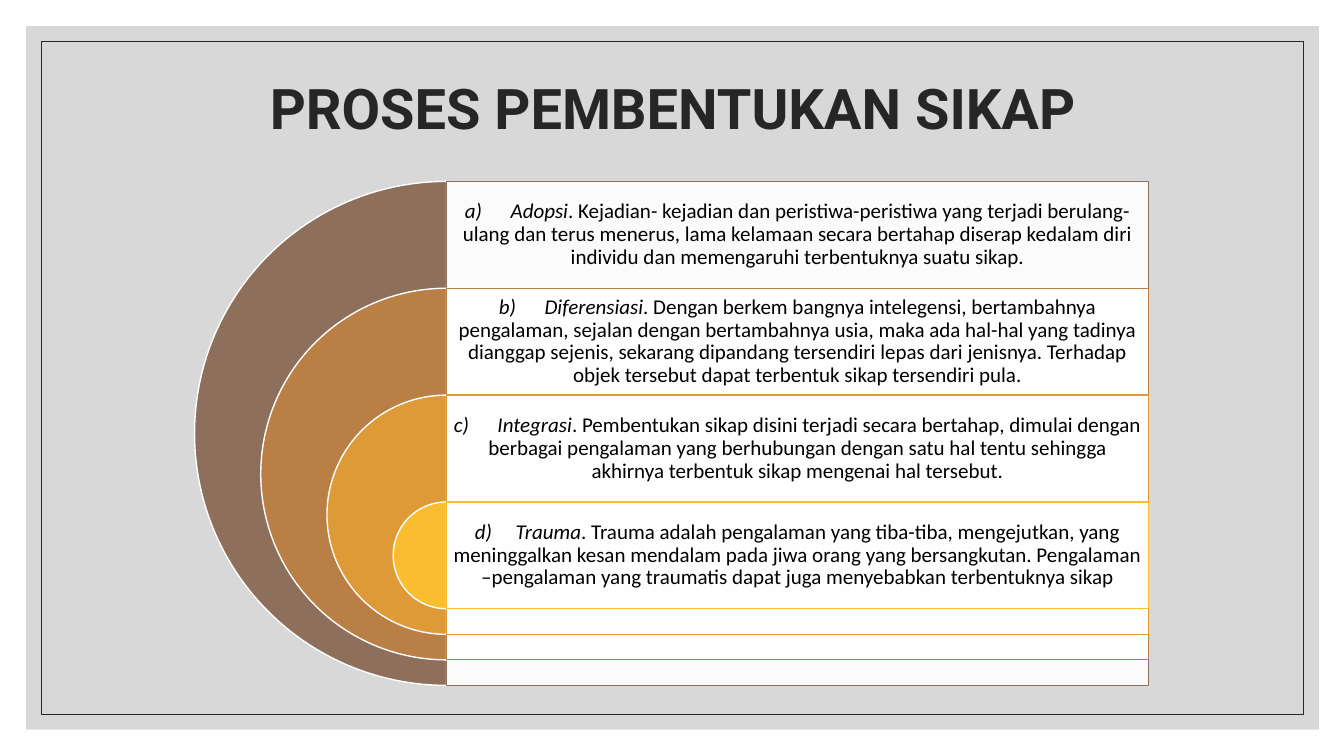
import pptx
import pptx.dml.color
import pptx.enum.shapes
import pptx.enum.text
import pptx.util
from lxml import etree
from pptx.oxml.ns import qn
from pptx.util import Inches

TITLE = "PROSES PEMBENTUKAN SIKAP"
# Marker, gap after the marker in points, term, explanation, colour
STAGES = [
    ("a)", 17, "Adopsi",
     ". Kejadian- kejadian dan peristiwa-peristiwa yang terjadi berulang-ulang dan terus "
     "menerus, lama kelamaan secara bertahap diserap kedalam diri individu dan memengaruhi "
     "terbentuknya suatu sikap.", "8D6F5B"),
    ("b)", 17, "Diferensiasi",
     ". Dengan berkem bangnya intelegensi, bertambahnya pengalaman, sejalan dengan "
     "bertambahnya usia, maka ada hal-hal yang tadinya dianggap sejenis, sekarang dipandang "
     "tersendiri lepas dari jenisnya. Terhadap objek tersebut dapat terbentuk sikap "
     "tersendiri pula.", "B97F44"),
    ("c)", 17, "Integrasi",
     ". Pembentukan sikap disini terjadi secara bertahap, dimulai dengan berbagai pengalaman "
     "yang berhubungan dengan satu hal tentu sehingga akhirnya terbentuk sikap mengenai hal "
     "tersebut.", "DD9A37"),
    ("d)", 13.5, "Trauma",
     ". Trauma adalah pengalaman yang tiba-tiba, mengejutkan, yang meninggalkan kesan "
     "mendalam pada jiwa orang yang bersangkutan. Pengalaman –pengalaman yang traumatis "
     "dapat juga menyebabkan terbentuknya sikap", "FABD2F"),
]
CENTER_X, TOP = 4.43, 1.8
PANEL_WIDTH, ROW_HEIGHT, OUTER_SIZE = 6.96, 1.06, 5
SIZE_STEP = (OUTER_SIZE - ROW_HEIGHT) / (len(STAGES) - 1)

SHAPES = pptx.enum.shapes.MSO_SHAPE


def color(hex_string):
    return pptx.dml.color.RGBColor.from_string(hex_string)


def add_shape(kind, left, top, width, height, fill=None, opacity=100, line=None, line_width=1):
    shape = slide.shapes.add_shape(
        kind, Inches(left), Inches(top), Inches(width), Inches(height))
    shape.shadow.inherit = False
    if fill:
        shape.fill.solid()
        shape.fill.fore_color.rgb = color(fill)
        if opacity < 100:
            fill_color = shape.fill._xPr.find(qn("a:solidFill"))[0]
            etree.SubElement(fill_color, qn("a:alpha"), val=str(opacity * 1000))
    else:
        shape.fill.background()
    if line:
        shape.line.color.rgb = color(line)
        shape.line.width = pptx.util.Pt(line_width)
    else:
        shape.line.fill.background()
    return shape


def add_text(left, top, width, height, margin):
    """Add a centred text box and return its paragraph."""
    box = slide.shapes.add_textbox(
        Inches(left), Inches(top), Inches(width), Inches(height))
    frame = box.text_frame
    frame.word_wrap = True
    frame.vertical_anchor = pptx.enum.text.MSO_ANCHOR.MIDDLE
    frame.margin_left = frame.margin_right = Inches(margin)
    frame.margin_top = frame.margin_bottom = Inches(0.06)
    paragraph = frame.paragraphs[0]
    paragraph.alignment = pptx.enum.text.PP_ALIGN.CENTER
    paragraph.line_spacing = 0.9
    return paragraph


def add_run(paragraph, text, size, font, hex_string, bold=False, italic=False, spacing=0):
    run = paragraph.add_run()
    run.text = text
    run.font.size = pptx.util.Pt(size)
    run.font.name = font
    run.font.color.rgb = color(hex_string)
    run.font.bold = bold
    run.font.italic = italic
    if spacing:
        run._r.get_or_add_rPr().set("spc", str(int(spacing * 100)))


def add_stage(index, marker, gap, term, explanation, hex_string):
    top = TOP + index * ROW_HEIGHT
    size = OUTER_SIZE - index * SIZE_STEP
    half_disc = add_shape(SHAPES.PIE, CENTER_X - size / 2, top, size, size,
                          fill=hex_string, line="FFFFFF")
    half_disc.adjustments[0] = 54
    half_disc.adjustments[1] = 162
    add_shape(SHAPES.RECTANGLE, CENTER_X, top, PANEL_WIDTH, size,
              fill="FFFFFF", opacity=90, line=hex_string)
    paragraph = add_text(CENTER_X, top, PANEL_WIDTH, ROW_HEIGHT, 0.06)
    paragraph.space_after = pptx.util.Pt(5.25)
    add_run(paragraph, marker, 15, "Calibri", "000000", italic=True)
    add_run(paragraph, " ", 15, "Calibri", "000000", italic=True, spacing=gap)
    add_run(paragraph, term, 15, "Calibri", "000000", italic=True)
    add_run(paragraph, explanation, 15, "Calibri", "000000")


presentation = pptx.Presentation()
presentation.slide_width = Inches(13.33)
presentation.slide_height = Inches(7.5)
slide = presentation.slides.add_slide(presentation.slide_layouts[6])

add_shape(SHAPES.RECTANGLE, 0.26, 0.26, 12.82, 6.98, fill="BFBFBF", opacity=60)
add_shape(SHAPES.RECTANGLE, 0.41, 0.41, 12.52, 6.68, line="262626", line_width=0.5)
for index, stage in enumerate(STAGES):
    add_stage(index, *stage)
add_run(add_text(1.17, 0.7, 11, 0.81, 0.1), TITLE, 40, "Roboto", "262626", bold=True)

presentation.save("out.pptx")
